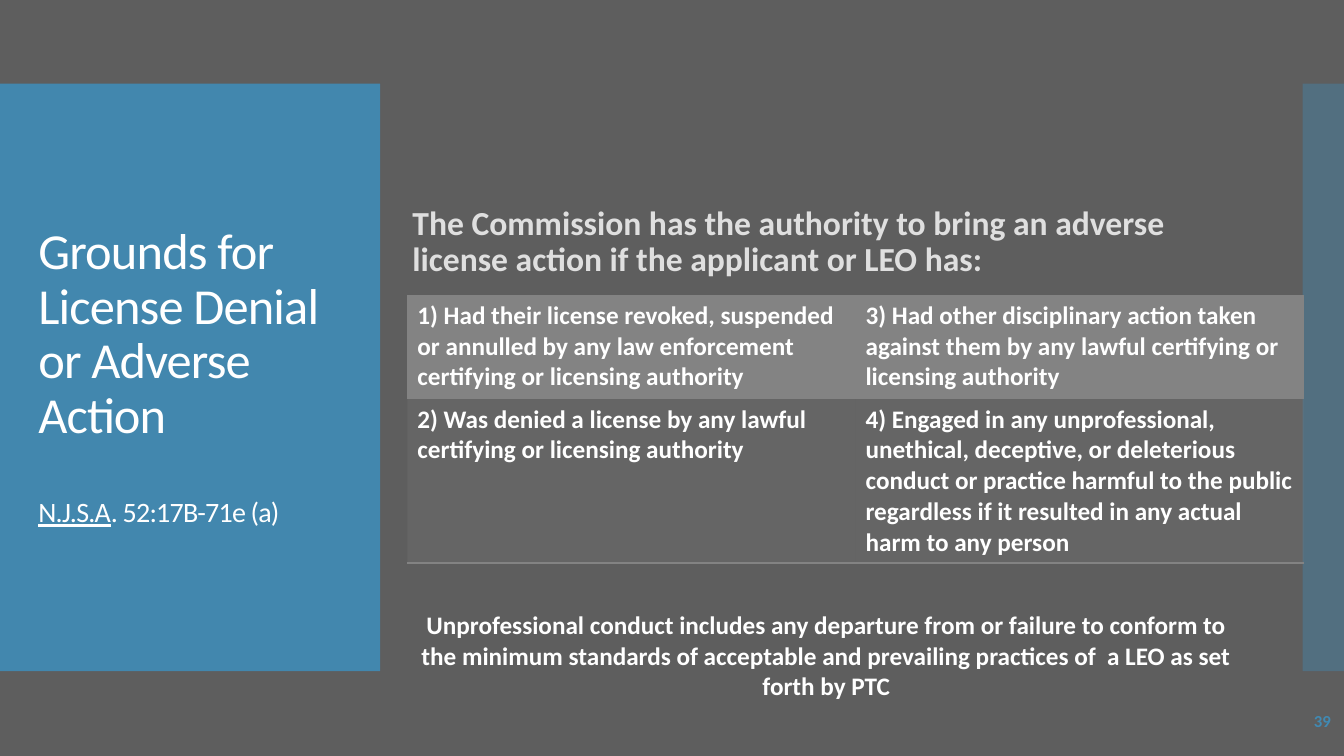
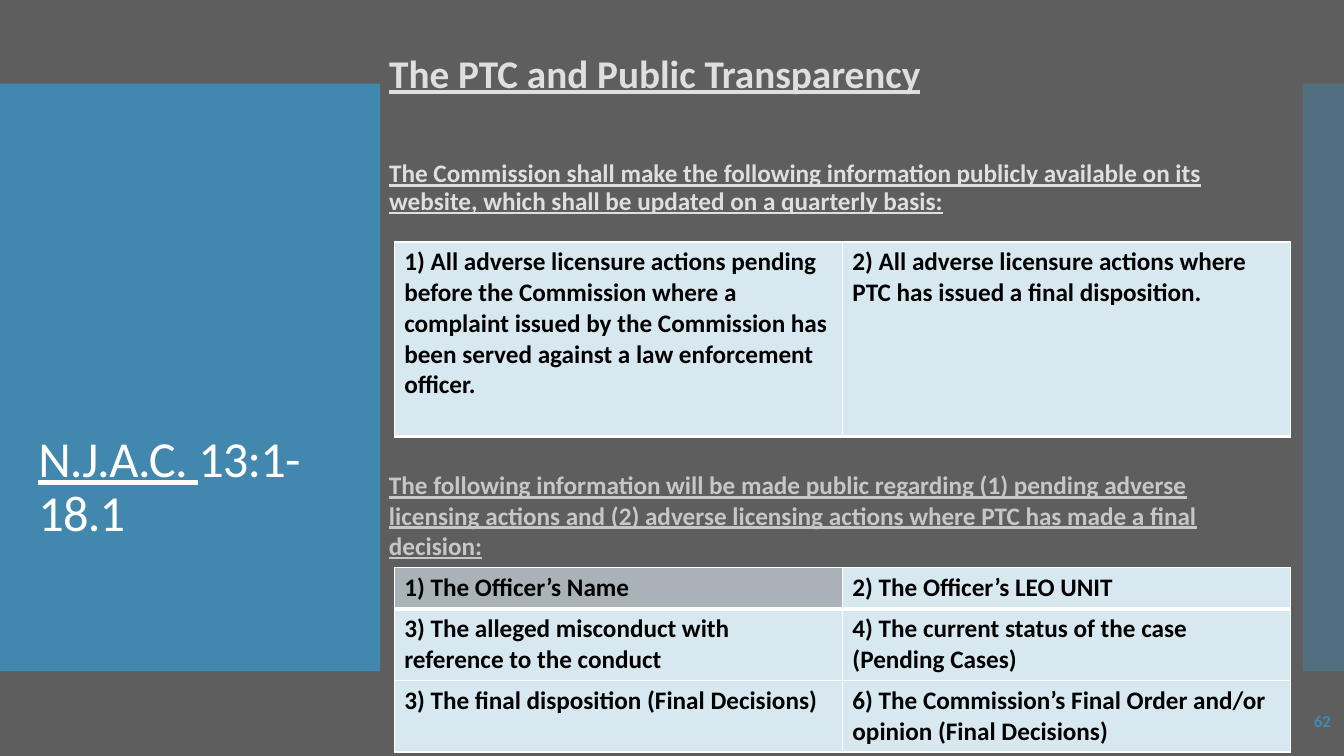
from lxml import etree
from pptx import Presentation
from pptx.dml.color import RGBColor
from pptx.enum.shapes import MSO_SHAPE
from pptx.enum.text import MSO_ANCHOR, MSO_AUTO_SIZE, PP_ALIGN
from pptx.oxml.ns import qn
from pptx.util import Inches, Pt

RECT = MSO_SHAPE.RECTANGLE
TOP, MIDDLE = MSO_ANCHOR.TOP, MSO_ANCHOR.MIDDLE
LEFT, CENTER, RIGHT = PP_ALIGN.LEFT, PP_ALIGN.CENTER, PP_ALIGN.RIGHT
NO_FIT = MSO_AUTO_SIZE.NONE
NO_STYLE = "{2D5ABB26-0587-4C30-8999-92F81FD0307C}"

THEME = {
    "font": "Calibri",
    "back": "5E5E5E",
    "accent": "418AB3",
    "white": "FFFFFF",
    "black": "000000",
    "heading": "DFDFDF",
    "muted": "C7C7C7",
    "gray": "838383",
    "pale": "D8E8F1",
    "title_pt": 36,
    "topic_pt": 28,
    "lead_pt": 24,
    "cite_pt": 20,
    "text_pt": 18,
    "number_pt": 12,
    "tight": 0.9,
}

TITLE_BOX = (0.28, 1.23, 3.22, 5.03)
BANDS = [((0, 0.83, 3.77, 5.83), 95), ((12.92, 0.83, 0.42, 5.83), 40)]
NUMBER_BOX = (12.7, 6.95, 0.6, 0.4)

TITLE = {"size": THEME["title_pt"], "color": THEME["white"]}
CITE = {**TITLE, "size": THEME["cite_pt"]}
LEAD = {"size": THEME["lead_pt"], "color": THEME["heading"], "bold": True}
TOPIC = {**LEAD, "size": THEME["topic_pt"], "underline": True}
INTRO = {**TOPIC, "size": THEME["text_pt"]}
LIGHT = {"size": THEME["text_pt"], "color": THEME["white"], "bold": True}
DARK = {**LIGHT, "color": THEME["black"]}
MUTED = {**LIGHT, "color": THEME["muted"], "underline": True}
NUMBER = {"size": THEME["number_pt"], "color": THEME["accent"], "bold": True}

SLIDES = [
    {
        "number": "39",
        "title": [
            (0, [("Grounds for License Denial or Adverse Action", TITLE)]),
            (39, [("N.J.S.A", {**CITE, "underline": True}), (". 52:17B-71e (a)", CITE)]),
        ],
        "title_drop": 0,
        "body_box": (3.99, 2, 8, 0.85),
        "body": [
            (0, [("The Commission has the authority to bring an adverse license action "
                  "if the applicant or LEO has:", LEAD)]),
        ],
        "tables": [
            {
                "at": (4.04, 2.93, 8.89),
                "heights": [1.03, 1.62],
                "format": LIGHT,
                "line": THEME["gray"],
                "across": [1, 0, 1],
                "down": 0,
                "fill": THEME["gray"],
                "faded": {(1, 0): 20, (1, 1): 20},
                "rows": [
                    ("1) Had their license revoked, suspended or annulled by any law "
                     "enforcement certifying or licensing authority",
                     "3) Had other disciplinary action taken against them by any lawful "
                     "certifying or licensing authority"),
                    ("2) Was denied a license by any lawful certifying or licensing authority",
                     "4) Engaged in any unprofessional, unethical, deceptive, or deleterious "
                     "conduct or practice harmful to the public regardless if it resulted in "
                     "any actual harm to any person"),
                ],
            },
        ],
        "note_box": (4.04, 6, 8.31, 1.01),
        "note": ("Unprofessional conduct includes any departure from or failure to conform to "
                 "the minimum standards of acceptable and prevailing practices of  a LEO as set "
                 "forth by PTC", LIGHT),
        "note_align": CENTER,
    },
    {
        "number": "62",
        "title": [
            (0, [("N.J.A.C. ", {**TITLE, "underline": True}), ("13:1-18.1", TITLE)]),
        ],
        "title_drop": 2.2,
        "body_box": (3.76, 0.49, 8.48, 1.75),
        "body": [
            (0, [("The PTC and Public Transparency", TOPIC)]),
            (46, [("The Commission shall make the following information publicly available "
                   "on its website, which shall be updated on a quarterly basis:", INTRO)]),
        ],
        "tables": [
            {
                "at": (3.91, 2.4, 8.89),
                "heights": [1.93],
                "format": DARK,
                "line": THEME["white"],
                "across": [1, 3],
                "down": 1,
                "fill": THEME["pale"],
                "faded": {},
                "rows": [
                    ("1) All adverse licensure actions pending before the Commission where a "
                     "complaint issued by the Commission has been served against a law "
                     "enforcement officer.",
                     "2) All adverse licensure actions where PTC has issued a final disposition."),
                ],
            },
            {
                "at": (3.91, 5.63, 8.89),
                "heights": [0.41, 0.7, 0.7],
                "format": DARK,
                "line": THEME["white"],
                "across": [1, 3, 1, 1],
                "down": 1,
                "fill": THEME["pale"],
                "faded": {(0, 0): 61},
                "rows": [
                    ("1) The Officer’s Name", "2) The Officer’s LEO UNIT"),
                    ("3) The alleged misconduct with reference to the conduct",
                     "4) The current status of the case (Pending Cases)"),
                    ("3) The final disposition (Final Decisions)",
                     "6) The Commission’s Final Order and/or opinion (Final Decisions)"),
                ],
            },
        ],
        "note_box": (3.76, 4.61, 9.04, 1.01),
        "note": ("The following information will be made public regarding (1) pending adverse "
                 "licensing actions and (2) adverse licensing actions where PTC has made a final "
                 "decision:", MUTED),
        "note_align": LEFT,
    },
]


def place(sp, box):
    for name, value in zip(("left", "top", "width", "height"), box):
        setattr(sp, name, Inches(value))


def fade(element, percent):
    for color in element.iter(qn("a:srgbClr")):
        etree.SubElement(color, qn("a:alpha"), val=str(percent * 1000))


def write(tf, paragraphs, align=LEFT, spacing=1.0):
    for i, (before, runs) in enumerate(paragraphs):
        p = tf.paragraphs[0] if i == 0 else tf.add_paragraph()
        layout = {"alignment": align, "line_spacing": spacing,
                  "space_before": Pt(before), "space_after": Pt(0)}
        for name, value in layout.items():
            setattr(p, name, value)
        for text, fmt in runs:
            r = p.add_run()
            r.text = text
            r.font.name = THEME["font"]
            for name, value in fmt.items():
                if name == "color":
                    r.font.color.rgb = RGBColor.from_string(value)
                else:
                    setattr(r.font, name, Pt(value) if name == "size" else value)


def set_frame(tf, anchor):
    for name, value in {"word_wrap": True, "auto_size": NO_FIT, "vertical_anchor": anchor}.items():
        setattr(tf, name, value)


def add_text(s, box, paragraphs, align, anchor=TOP):
    sp = s.shapes.add_textbox(*map(Inches, box))
    set_frame(sp.text_frame, anchor)
    write(sp.text_frame, paragraphs, align)


def share_bands(layout, s):
    for i, (box, opacity) in enumerate(BANDS):
        sp = s.shapes.add_shape(RECT, *map(Inches, box))
        sp.shadow.inherit = False
        sp.fill.solid()
        sp.fill.fore_color.rgb = RGBColor.from_string(THEME["accent"])
        sp.line.fill.background()
        fade(sp.element, opacity)
        sp.element.nvSpPr.cNvPr.set("id", str(100 + i))
        layout.shapes.element.insert(2 + i, sp.element)


def add_borders(tc_pr, widths, color):
    for i, (side, width) in enumerate(widths.items()):
        line = etree.Element(qn("a:ln" + side), w=str(Pt(width)))
        if width:
            fill = etree.SubElement(line, qn("a:solidFill"))
            etree.SubElement(fill, qn("a:srgbClr"), val=color)
        else:
            etree.SubElement(line, qn("a:noFill"))
        tc_pr.insert(i, line)


def add_grid(s, grid):
    left, top, width = grid["at"]
    rows, heights, across = grid["rows"], grid["heights"], grid["across"]
    cols = len(rows[0])
    frame = s.shapes.add_table(len(rows), cols, *map(Inches, (left, top, width, sum(heights))))
    table = frame.table
    table.first_row = table.horz_banding = False
    for style in frame.element.iter(qn("a:tableStyleId")):
        style.text = NO_STYLE
    for col in table.columns:
        col.width = Inches(width / cols)
    for row, height in zip(table.rows, heights):
        row.height = Inches(height)
    cells = frame.element.iter(qn("a:tc"))
    for i, texts in enumerate(rows):
        for j, text in enumerate(texts):
            cell = table.cell(i, j)
            write(cell.text_frame, [(0, [(text, grid["format"])])])
            cell.fill.solid()
            cell.fill.fore_color.rgb = RGBColor.from_string(grid["fill"])
            tc_pr = next(cells).find(qn("a:tcPr"))
            if (i, j) in grid["faded"]:
                fade(tc_pr, grid["faded"][i, j])
            widths = {"L": grid["down"], "R": grid["down"], "T": across[i], "B": across[i + 1]}
            add_borders(tc_pr, widths, grid["line"])


def fill_slide(s, data):
    title = s.shapes.title
    set_frame(title.text_frame, MIDDLE)
    title.text_frame.margin_top = Inches(0.05 + data["title_drop"])
    write(title.text_frame, data["title"], spacing=THEME["tight"])
    for props in title.element.iter(qn("a:rPr")):
        props.set("spc", "-60")

    body = s.placeholders[1]
    place(body, data["body_box"])
    set_frame(body.text_frame, TOP)
    write(body.text_frame, data["body"], spacing=THEME["tight"])
    for props in body.element.iter(qn("a:pPr")):
        props.set("marL", "0")
        props.set("indent", "0")
        etree.SubElement(props, qn("a:buNone"))

    for grid in data["tables"]:
        add_grid(s, grid)
    add_text(s, data["note_box"], [(0, [data["note"]])], data["note_align"])
    add_text(s, NUMBER_BOX, [(0, [(data["number"], NUMBER)])], RIGHT, MIDDLE)


def main():
    prs = Presentation()
    prs.slide_width, prs.slide_height = Inches(13.33), Inches(7.5)
    back = prs.slide_master.background.fill
    back.solid()
    back.fore_color.rgb = RGBColor.from_string(THEME["back"])
    layout = prs.slide_layouts[1]
    place(layout.placeholders[0], TITLE_BOX)
    for i, data in enumerate(SLIDES):
        s = prs.slides.add_slide(layout)
        if i == 0:
            share_bands(layout, s)
        fill_slide(s, data)
    prs.save("out.pptx")


if __name__ == "__main__":
    main()
